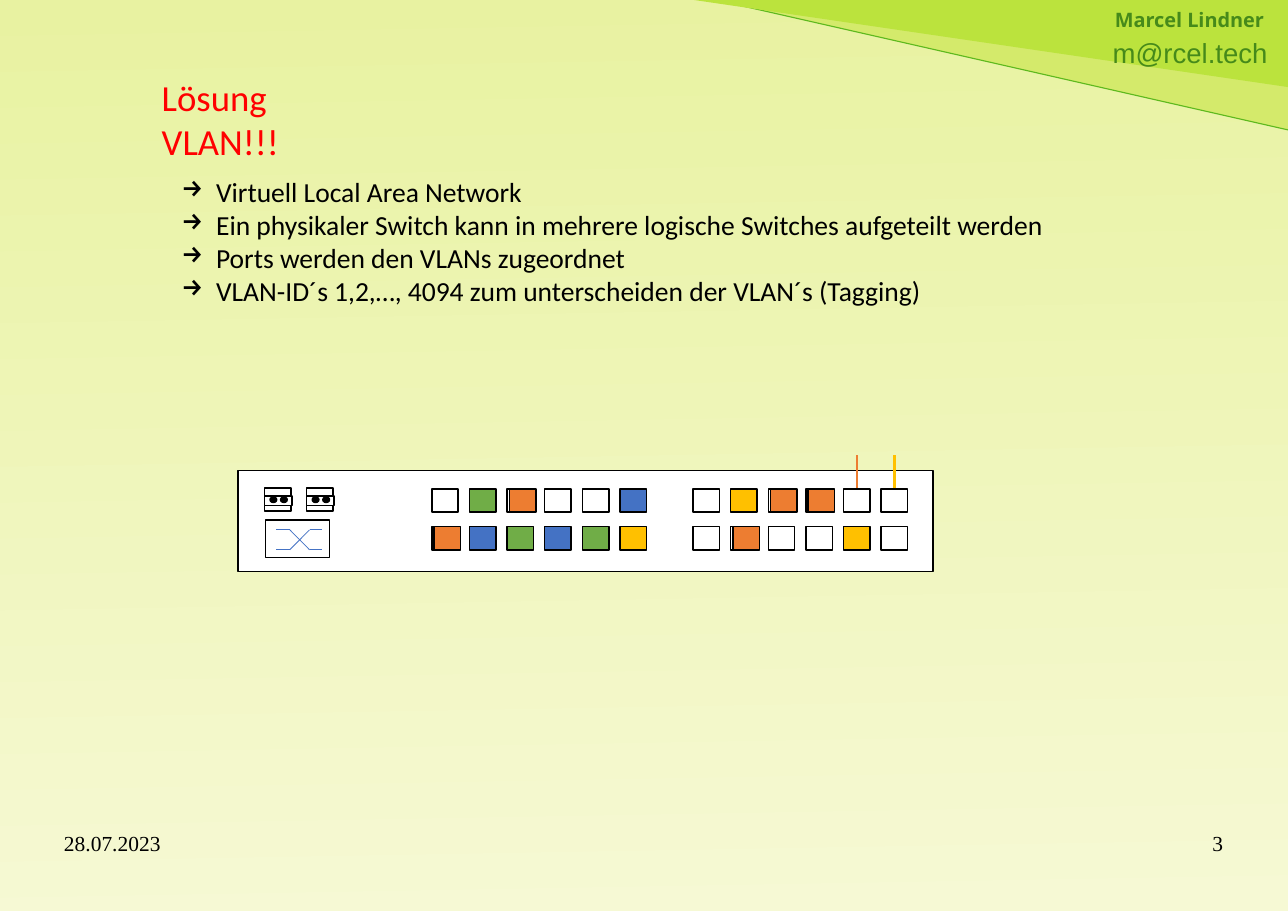
from lxml import etree
from pptx import Presentation
from pptx.dml.color import RGBColor
from pptx.enum.shapes import MSO_CONNECTOR, MSO_SHAPE
from pptx.enum.text import MSO_ANCHOR, PP_ALIGN
from pptx.oxml.ns import qn
from pptx.util import Pt

RECTANGLE, OVAL = MSO_SHAPE.RECTANGLE, MSO_SHAPE.OVAL
TRIANGLE = MSO_SHAPE.RIGHT_TRIANGLE
STRAIGHT = MSO_CONNECTOR.STRAIGHT
LEFT, RIGHT = PP_ALIGN.LEFT, PP_ALIGN.RIGHT
TOP, MIDDLE = MSO_ANCHOR.TOP, MSO_ANCHOR.MIDDLE

BLACK = RGBColor(0x00, 0x00, 0x00)
WHITE = RGBColor(0xFF, 0xFF, 0xFF)
RED = RGBColor(0xFF, 0x00, 0x00)
BLUE = RGBColor(0x44, 0x72, 0xC4)
GREEN = RGBColor(0x70, 0xAD, 0x47)
YELLOW = RGBColor(0xFF, 0xC0, 0x00)
ORANGE = RGBColor(0xED, 0x7D, 0x31)
DARK_GREEN = RGBColor(0x46, 0x8A, 0x1A)
EDGE_GREEN = RGBColor(0x5E, 0xB9, 0x1E)
PALE_LIME = RGBColor(0xD4, 0xEA, 0x6B)
LIME = RGBColor(0xBB, 0xE3, 0x3D)
SKY_TOP = RGBColor(0xE8, 0xF2, 0xA1)
SKY_BOTTOM = RGBColor(0xF6, 0xF9, 0xD4)

# Content
AUTHOR = "Marcel Lindner"
ADDRESS = "m@rcel.tech"
TITLE = "Lösung\vVLAN!!!"
POINTS = [
    "Virtuell Local Area Network",
    "Ein physikaler Switch kann in mehrere logische Switches aufgeteilt werden",
    "Ports werden den VLANs zugeordnet",
    "VLAN-ID´s 1,2,…, 4094 zum unterscheiden der VLAN´s (Tagging)",
]
DATE, PAGE_NUMBER = "28.07.2023", "3"

# One letter per port: two rows in each block
PORT_COLOURS = {"w": WHITE, "g": GREEN, "b": BLUE, "y": YELLOW, "o": ORANGE}
PORT_BLOCKS = [(282.2, ["wgowwb", "obgbgy"]), (452.9, ["wyooww", "wowwyw"])]
UPLINKS = [(4, ORANGE), (5, YELLOW)]  # columns of the last block

# Measures in points
PORT_WIDTH, PORT_HEIGHT = 17.3, 15.1
PORT_TOP, COLUMN_STEP, ROW_STEP = 319.7, 24.6, 24.5
OVERLAY_SHIFT = 1.5
SOCKET_LEFTS, SOCKET_TOP = (172.8, 200.4), 319
UPLINK_TOP = 297.4
SYMBOL_XS = (180.7, 189.4, 202.3, 210.2)
SYMBOL_TOP, SYMBOL_BOTTOM = 346.3, 359.3

deck = Presentation()
deck.slide_width, deck.slide_height = Pt(841.7), Pt(595.4)
page = deck.slides.add_slide(deck.slide_layouts[6])


def add_form(shapes, kind, left, top, width, height, fill, line=BLACK, weight=1):
    form = shapes.add_shape(kind, Pt(left), Pt(top), Pt(width), Pt(height))
    form.shadow.inherit = False
    form.fill.solid()
    form.fill.fore_color.rgb = fill
    if line is None:
        form.line.fill.background()
    else:
        form.line.color.rgb = line
        form.line.width = Pt(weight)
    return form


def add_line(shapes, start, end, colour, weight):
    line = shapes.add_connector(STRAIGHT, Pt(start[0]), Pt(start[1]), Pt(end[0]), Pt(end[1]))
    line.line.color.rgb = colour
    line.line.width = Pt(weight)
    etree.SubElement(line._element.spPr, qn("a:effectLst"))


def add_text(lines, left, top, width, height, font, size, colour=BLACK,
             align=LEFT, anchor=TOP, inset=(7.2, 3.6), wrap=False, bold=False):
    box = page.shapes.add_textbox(Pt(left), Pt(top), Pt(width), Pt(height))
    frame = box.text_frame
    frame.word_wrap = wrap
    frame.vertical_anchor = anchor
    frame.margin_left = frame.margin_right = Pt(inset[0])
    frame.margin_top = frame.margin_bottom = Pt(inset[1])
    frame.text = "\n".join(lines)
    for para in frame.paragraphs:
        para.alignment = align
        for span in para.runs:
            span.font.name = font
            span.font.size = Pt(size)
            span.font.bold = bold
            span.font.color.rgb = colour
    return frame


def add_arrow_bullet(para):
    properties = para._p.get_or_add_pPr()
    properties.set("marL", str(Pt(22.5)))
    properties.set("indent", str(-Pt(22.5)))
    bullet_colour = etree.SubElement(properties, qn("a:buClr"))
    etree.SubElement(bullet_colour, qn("a:srgbClr"), val=str(BLACK))
    etree.SubElement(properties, qn("a:buChar"), char="→")


# Background and corner
background = page.background.fill
background.gradient()
background.gradient_angle = 271
for stop, colour, position in zip(background.gradient_stops, (SKY_TOP, SKY_BOTTOM), (0, 1)):
    stop.color.rgb = colour
    stop.position = position
add_form(page.shapes, TRIANGLE, 468, 0, 374.2, 85, PALE_LIME, EDGE_GREEN, 0).rotation = 180
add_form(page.shapes, TRIANGLE, 453.6, 0, 388.1, 56.9, LIME, None).rotation = 180

# Header, title and points
add_text([AUTHOR], 677.5, 2.9, 155.5, 20.2, "Noto Sans", 13, DARK_GREEN,
         RIGHT, MIDDLE, bold=True)
add_text([ADDRESS], 720, 20.2, 121.7, 27.4, "Arial", 18, DARK_GREEN, wrap=True)
add_text([TITLE], 98.6, 45.4, 164.9, 65, "Calibri", 24, RED, wrap=True)
points = add_text(POINTS, 111.6, 110.9, 577.4, 93.6, "Calibri", 18)
for para in points.paragraphs:
    add_arrow_bullet(para)

# Switch housing and ports; an orange port lies slightly shifted on a white one
add_form(page.shapes, RECTANGLE, 155.5, 307.4, 454.3, 66.2, WHITE)
for block_left, rows in PORT_BLOCKS:
    for row, letters in enumerate(rows):
        for column, letter in enumerate(letters):
            left = block_left + column * COLUMN_STEP
            top = PORT_TOP + row * ROW_STEP
            layers = [(0, PORT_COLOURS[letter])]
            if letter == "o":
                layers = [(0, WHITE), (OVERLAY_SHIFT, ORANGE)]
            for shift, colour in layers:
                add_form(page.shapes, RECTANGLE, left + shift, top,
                         PORT_WIDTH, PORT_HEIGHT, colour)

# Power sockets
for left in SOCKET_LEFTS:
    add_form(page.shapes, RECTANGLE, left, SOCKET_TOP, PORT_WIDTH, PORT_HEIGHT, WHITE)
    add_form(page.shapes, RECTANGLE, left, SOCKET_TOP + 5, 18, 6.5, WHITE)
    for hole in (3.7, 10.6):
        add_form(page.shapes, OVAL, left + hole, SOCKET_TOP + 5.8, 4.3, 3.6, BLACK)

# Switch symbol: two crossing lines
symbol = page.shapes.add_group_shape().shapes
add_form(symbol, RECTANGLE, 173.5, 339.8, 41.8, 24.5, WHITE)
for first, last in ((SYMBOL_BOTTOM, SYMBOL_TOP), (SYMBOL_TOP, SYMBOL_BOTTOM)):
    corners = list(zip(SYMBOL_XS, (first, first, last, last)))
    for start, end in zip(corners, corners[1:]):
        add_line(symbol, start, end, BLUE, 0.5)

# Uplinks
for column, colour in UPLINKS:
    middle = PORT_BLOCKS[-1][0] + column * COLUMN_STEP + PORT_WIDTH / 2
    add_line(page.shapes, (middle, PORT_TOP - 1), (middle, UPLINK_TOP), colour, 1.5)

# Footer
for text, left, align in ((PAGE_NUMBER, 603.4, RIGHT), (DATE, 41.8, LEFT)):
    add_text([text], left, 542.2, 195.8, 41, "Times New Roman", 14,
             align=align, inset=(0, 0), wrap=True)

deck.save("out.pptx")
